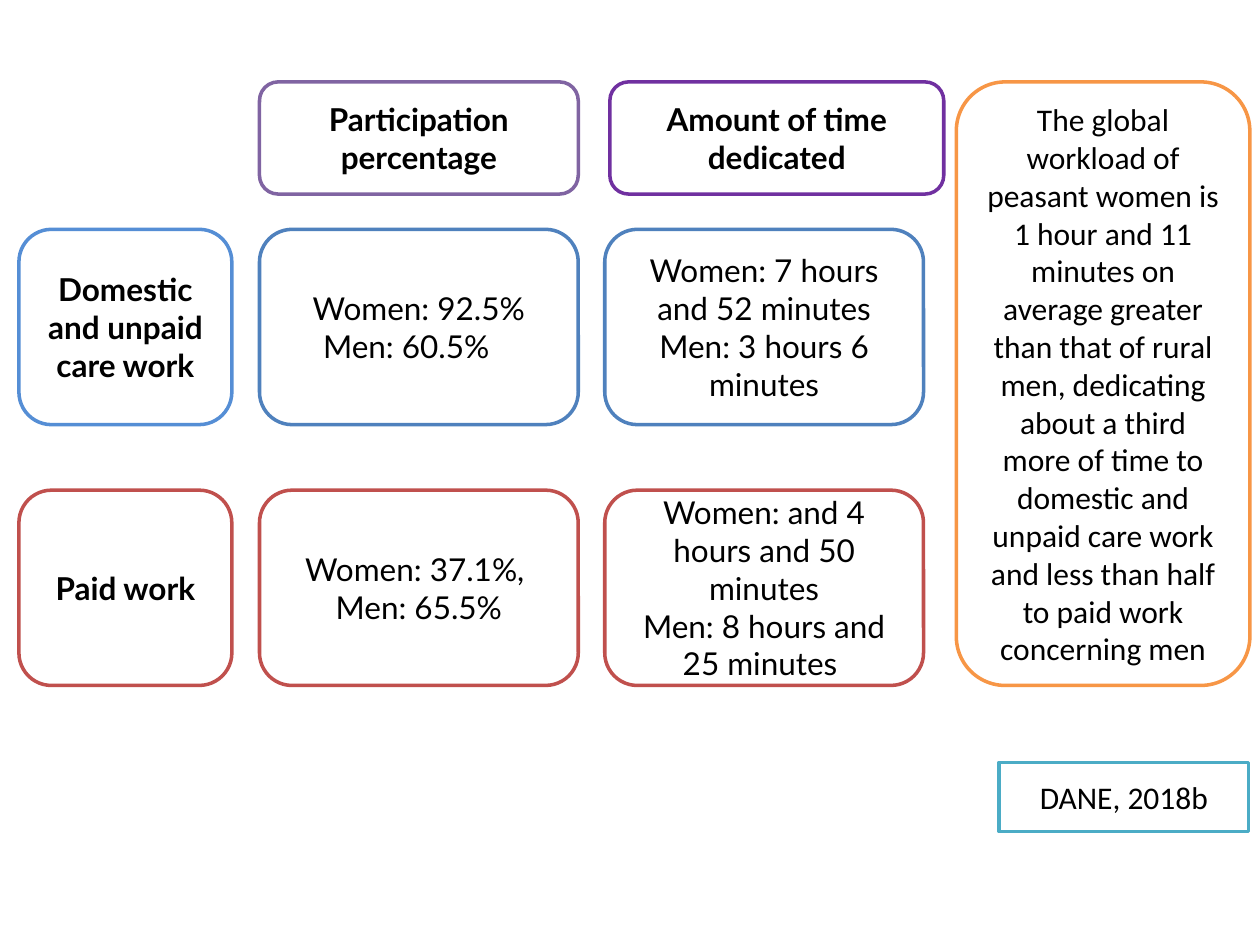
from dataclasses import dataclass

from pptx import Presentation
from pptx import util as u
from pptx.dml.color import RGBColor
from pptx.enum import shapes, text

ROUNDED = shapes.MSO_SHAPE.ROUNDED_RECTANGLE
BLUE, RED = "4F81BD", "C0504D"


@dataclass(frozen=True)
class Span:
    """Start and length of a grid column or row, in inches."""
    start: float
    size: float


@dataclass(frozen=True)
class Box:
    col: Span
    row: Span
    line: str
    lines: tuple[str, ...]
    bold: bool = False
    font: str = "Lato"
    kind: shapes.MSO_SHAPE = ROUNDED
    last_indent: float = 0  # right indent of the last line, in inches


# Grid
LABEL, SHARE, TIME = Span(0.15, 1.69), Span(2.06, 2.53), Span(4.8, 2.53)
TIME_HEAD, SIDE, SOURCE = Span(4.84, 2.65), Span(7.59, 2.33), Span(7.93, 1.98)
HEAD, DOMESTIC, PAID = Span(0.65, 0.89), Span(1.82, 1.55), Span(3.89, 1.55)
FULL = Span(HEAD.start, PAID.start + PAID.size - HEAD.start)
FOOT = Span(6.05, 0.55)

BOXES = [
    # Column headings
    Box(SHARE, HEAD, "8064A2", ("Participation percentage",), bold=True),
    Box(TIME_HEAD, HEAD, "7030A0", ("Amount of time dedicated",), bold=True),
    # Domestic work
    Box(LABEL, DOMESTIC, "558ED5", ("Domestic and unpaid care work",), bold=True),
    Box(SHARE, DOMESTIC, BLUE, ("Women: 92.5%", "Men: 60.5%"), last_indent=0.2),
    Box(TIME, DOMESTIC, BLUE,
        ("Women: 7 hours and 52 minutes", "Men: 3 hours 6 minutes")),
    # Paid work
    Box(LABEL, PAID, RED, ("Paid work",), bold=True),
    Box(SHARE, PAID, RED, ("Women: 37.1%, ", "Men: 65.5%")),
    Box(TIME, PAID, RED,
        ("Women: and 4 hours and 50 minutes", "Men: 8 hours and 25 minutes ")),
    # Conclusion and source
    Box(SIDE, FULL, "F79646",
        ("The global workload of peasant women is 1 hour and 11 minutes on "
         "average greater than that of rural men, dedicating about a third "
         "more of time to domestic and unpaid care work and less than half "
         "to paid work concerning men",), font="Calibri"),
    Box(SOURCE, FOOT, "4BACC6", ("DANE, 2018b",), font="Calibri",
        kind=shapes.MSO_SHAPE.RECTANGLE),
]


def color(value: str) -> RGBColor:
    return RGBColor.from_string(value)


def draw_box(slide, box: Box) -> None:
    sp = slide.shapes.add_shape(
        box.kind, u.Inches(box.col.start), u.Inches(box.row.start),
        u.Inches(box.col.size), u.Inches(box.row.size))
    sp.shadow.inherit = False
    sp.fill.solid()
    sp.fill.fore_color.rgb = color("FFFFFF")
    sp.line.color.rgb = color(box.line)
    sp.line.width = u.Pt(2)

    tf = sp.text_frame
    tf.word_wrap = True
    tf.vertical_anchor = text.MSO_ANCHOR.MIDDLE
    tf.text = "\n".join(box.lines)
    for p in tf.paragraphs:
        p.alignment = text.PP_ALIGN.CENTER
        p.font.name = box.font
        p.font.size = u.Pt(18)
        p.font.bold = box.bold
        p.font.color.rgb = color("000000")
    if box.last_indent:
        pPr = tf.paragraphs[-1]._p.get_or_add_pPr()
        pPr.set("marR", str(u.Inches(box.last_indent)))


def main() -> None:
    prs = Presentation()
    prs.slide_width, prs.slide_height = u.Inches(10), u.Inches(7.5)
    slide = prs.slides.add_slide(prs.slide_layouts[6])
    for box in BOXES:
        draw_box(slide, box)
    prs.save("out.pptx")


if __name__ == "__main__":
    main()
